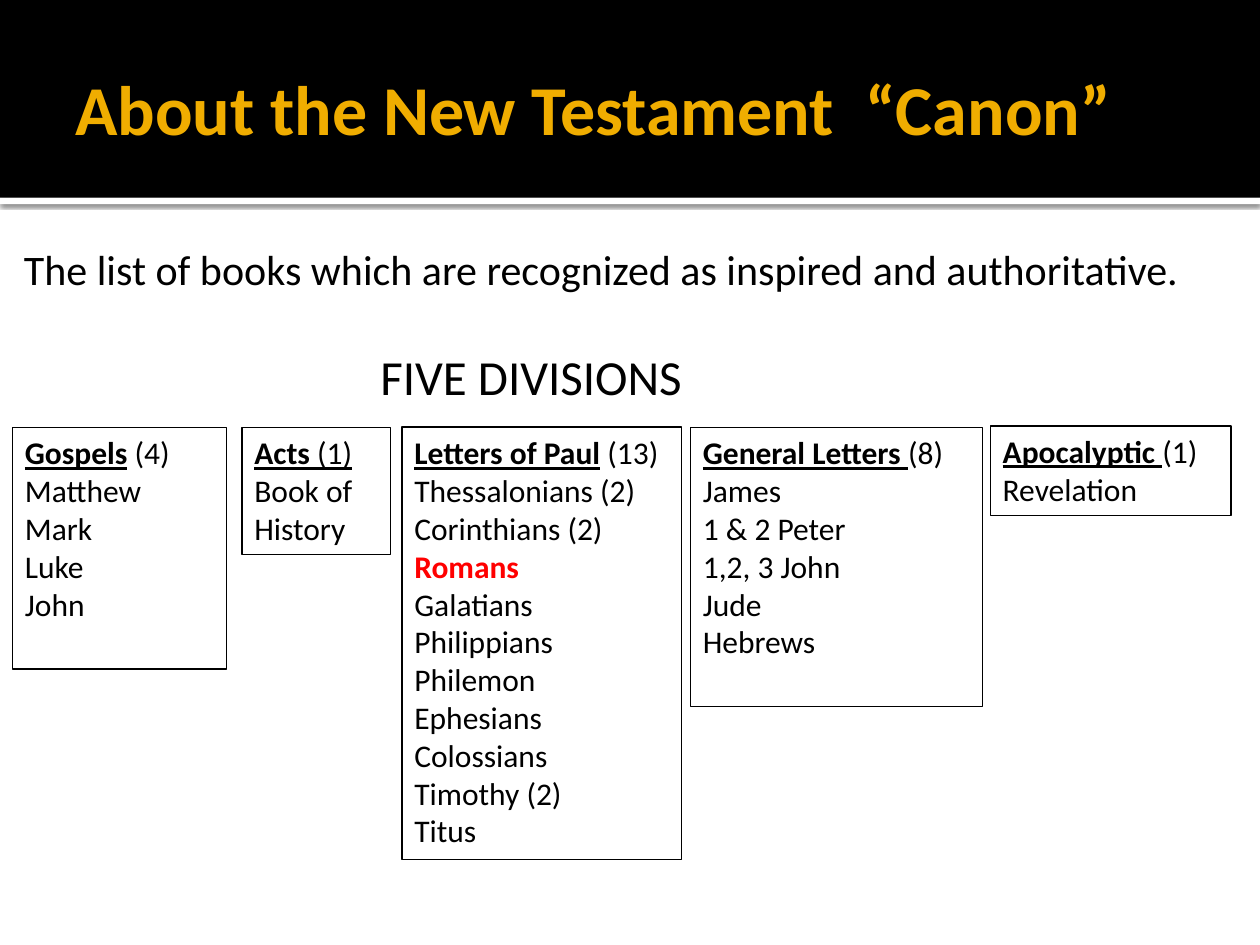
from lxml import etree
from pptx import Presentation
from pptx.dml.color import RGBColor
from pptx.enum.shapes import MSO_SHAPE as Shape
from pptx.enum.text import MSO_ANCHOR as Anchor, PP_ALIGN as Align
from pptx.oxml import parse_xml
from pptx.util import Inches, Pt

BLACK = RGBColor(0x00, 0x00, 0x00)
WHITE = RGBColor(0xFF, 0xFF, 0xFF)
GOLD = RGBColor(0xF0, 0xAD, 0x00)
RED = RGBColor(0xFF, 0x00, 0x00)
FONT = "Calibri"
A_NS = "http://schemas.openxmlformats.org/drawingml/2006/main"

# Box, bold heading, count, whether the count is underlined, entries
DIVISIONS = [
    ((0.1, 3.39, 1.7, 1.92), "Gospels", " (4)", False,
     ["Matthew", "Mark", "Luke", "John"]),
    ((1.92, 3.39, 1.18, 1.01), "Acts ", "(1)", True, ["Book of History"]),
    ((3.19, 3.39, 2.22, 3.43), "Letters of Paul", " (13)", False,
     ["Thessalonians (2)", "Corinthians (2)", "Romans", "Galatians",
      "Philippians", "Philemon", "Ephesians", "Colossians", "Timothy (2)",
      "Titus"]),
    ((5.48, 3.39, 2.32, 2.22), "General Letters ", "(8)", False,
     ["James", "1 & 2 Peter", "1,2, 3 John", "Jude", "Hebrews"]),
    ((7.86, 3.38, 1.91, 0.71), "Apocalyptic ", "(1)", False, ["Revelation"]),
]
HIGHLIGHT = "Romans"


def inches(box):
    return [Inches(v) for v in box]


def add_run(p, text, size, color=BLACK, bold=False, underline=False):
    r = p.add_run()
    r.text = text
    font = r.font
    font.name, font.size, font.bold = FONT, Pt(size), bold
    font.underline = underline
    font.color.rgb = color


def add_bar(slide, box, color):
    sp = slide.shapes.add_shape(Shape.RECTANGLE, *inches(box))
    sp.shadow.inherit = False
    sp.fill.solid()
    sp.fill.fore_color.rgb = color
    sp.line.fill.background()
    return sp


def add_line_of_text(slide, box, text, size, color=BLACK, bold=False,
                     left=0.1, top=0.05, anchor=Anchor.TOP):
    tf = slide.shapes.add_textbox(*inches(box)).text_frame
    tf.word_wrap = True
    tf.margin_left, tf.margin_top = Inches(left), Inches(top)
    tf.margin_right = Inches(0.05)
    tf.vertical_anchor = anchor
    add_run(tf.paragraphs[0], text, size, color, bold)


def add_header(slide, box):
    x, y, w, h = box
    # White rule with a soft shadow under the black band
    rule = add_bar(slide, (x, y + h, w, 0.05), WHITE)
    effects = rule._element.spPr.find(f"{{{A_NS}}}effectLst")
    effects.append(parse_xml(
        f'<a:outerShdw xmlns:a="{A_NS}" blurRad="{Pt(2.5)}" dist="{Pt(0.8)}" '
        'dir="5400000" algn="t" rotWithShape="0"><a:srgbClr val="000000">'
        '<a:alpha val="60000"/></a:srgbClr></a:outerShdw>'))
    add_bar(slide, box, BLACK)
    add_line_of_text(slide, (x + 0.5, y + 0.17, w - 1, h - 0.2),
                     "About the New Testament  “Canon”", 40, GOLD, True,
                     anchor=Anchor.MIDDLE)


def add_division(slide, box, heading, count, count_underlined, entries):
    sp = slide.shapes.add_shape(Shape.RECTANGLE, *inches(box))
    sp.shadow.inherit = False
    sp.fill.background()
    sp.line.color.rgb = BLACK
    sp.line.width = Pt(0.75)
    tf = sp.text_frame
    tf.word_wrap = True
    tf.vertical_anchor = Anchor.TOP
    p = tf.paragraphs[0]
    p.alignment = Align.LEFT
    add_run(p, heading, 18, bold=True, underline=True)
    add_run(p, count, 18, underline=count_underlined)
    for entry in entries:
        p = tf.add_paragraph()
        p.alignment = Align.LEFT
        marked = entry == HIGHLIGHT
        add_run(p, entry, 18, RED if marked else BLACK, marked)


def main():
    prs = Presentation()
    prs.slide_width, prs.slide_height = Inches(10), Inches(7.5)
    slide = prs.slides.add_slide(prs.slide_layouts[6])

    add_header(slide, (0, 0, 10, 1.57))
    # Definition and subheading
    add_line_of_text(
        slide, (0, 1.83, 10, 0.7),
        "The list of books which are recognized as inspired and authoritative.",
        24, left=0.19, top=0.1)
    add_line_of_text(slide, (2.92, 2.7, 3.09, 0.57), "FIVE DIVISIONS", 28)
    # Five divisions
    for division in DIVISIONS:
        add_division(slide, *division)

    prs.save("out.pptx")


if __name__ == "__main__":
    main()
